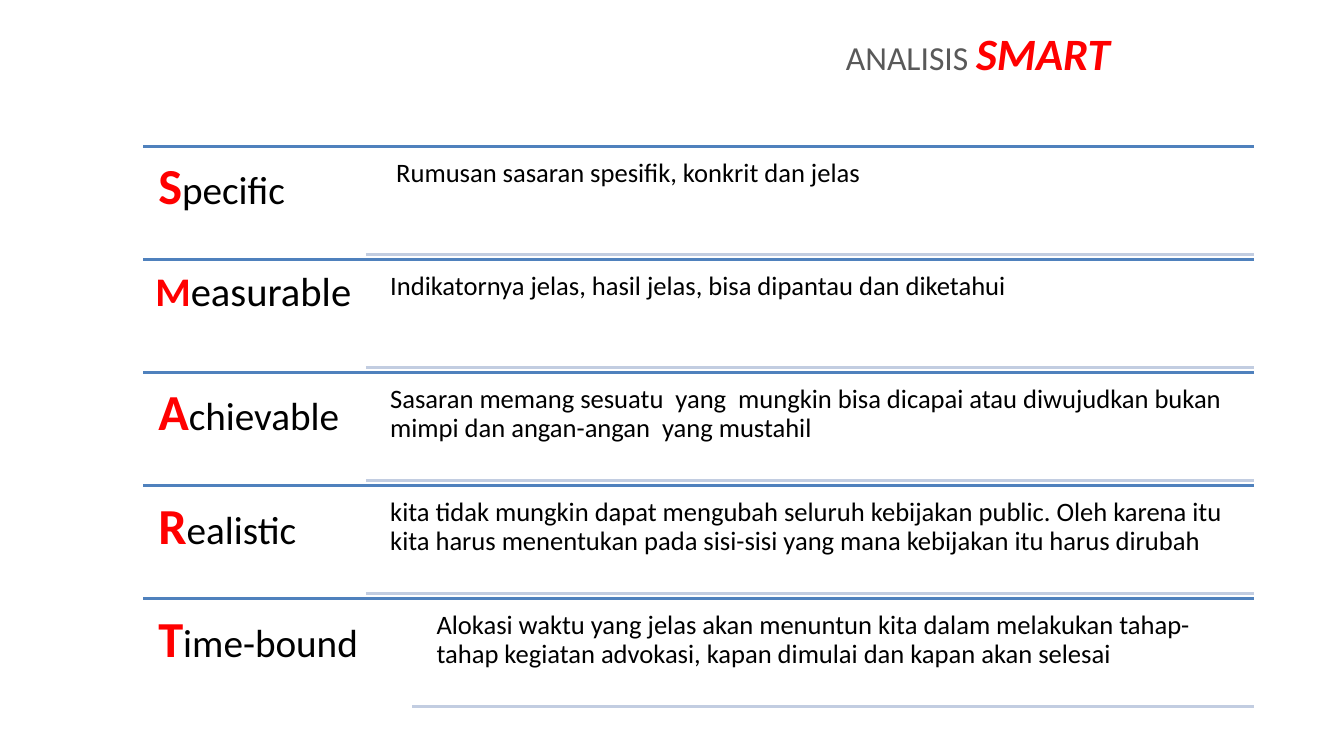
import pptx
import pptx.util
from pptx.dml.color import RGBColor
from pptx.enum.shapes import MSO_CONNECTOR
from pptx.enum.text import MSO_ANCHOR, MSO_AUTO_SIZE, PP_ALIGN
from pptx.oxml.ns import qn
from pptx.util import Inches, Pt
from lxml import etree

# Content: initial, rest of the word, their sizes, label inset, label width, description
TITLE = [("ANALISIS ", 24, "grey", False), ("SMART", 32, "red", True)]
CRITERIA = [
    ("S", "pecific", 36, 28, 0.15, 2.21,
     " Rumusan sasaran spesifik, konkrit dan jelas"),
    ("M", "easurable", 29, 29, 0.12, 2.21,
     "Indikatornya jelas, hasil jelas, bisa dipantau dan diketahui"),
    ("A", "chievable", 36, 28, 0.15, 2.21,
     "Sasaran memang sesuatu  yang  mungkin bisa dicapai atau diwujudkan bukan "
     "mimpi dan angan-angan  yang mustahil"),
    ("R", "ealistic", 36, 28, 0.15, 2.21,
     "kita tidak mungkin dapat mengubah seluruh kebijakan public. Oleh karena itu "
     "kita harus menentukan pada sisi-sisi yang mana kebijakan itu harus dirubah"),
    ("T", "ime-bound", 36, 28, 0.15, 2.67,
     "Alokasi waktu yang jelas akan menuntun kita dalam melakukan tahap-tahap "
     "kegiatan advokasi, kapan dimulai dan kapan akan selesai"),
]
COLORS = {"grey": "595959", "red": "FF0000", "black": "000000",
          "rule": "4F81BD", "underline": "C2CDE1"}
FONT = "Calibri"

# Layout in inches
LEFT, RIGHT, TOP, BOTTOM = 1.42, 12.44, 1.45, 7.06
ROW_HEIGHT = (BOTTOM - TOP) / len(CRITERIA)
GAP = 0.05           # row top to description, and underline to next row
INDENT = 0.16        # label edge to description


def color(name):
    return RGBColor.from_string(COLORS[name])


def add_rule(slide, left, y, color_name):
    rule = slide.shapes.add_connector(
        MSO_CONNECTOR.STRAIGHT, Inches(left), Inches(y), Inches(RIGHT), Inches(y))
    rule.line.color.rgb = color(color_name)
    rule.line.width = Pt(2)
    etree.SubElement(rule._element.spPr, qn("a:effectLst"))


def set_frame(frame, inset_x, inset_y):
    frame.word_wrap = True
    frame.auto_size = MSO_AUTO_SIZE.NONE
    frame.vertical_anchor = MSO_ANCHOR.TOP
    frame.margin_left = frame.margin_right = Inches(inset_x)
    frame.margin_top = frame.margin_bottom = Inches(inset_y)


def add_runs(paragraph, runs):
    paragraph.font.name = FONT
    paragraph.alignment = PP_ALIGN.LEFT
    for text, size, color_name, bold in runs:
        run = paragraph.add_run()
        run.text = text
        run.font.size = Pt(size)
        run.font.bold = bold
        run.font.color.rgb = color(color_name)


def add_text(slide, left, top, width, height, inset, runs):
    box = slide.shapes.add_textbox(
        Inches(left), Inches(top), Inches(width), Inches(height))
    set_frame(box.text_frame, inset, inset)
    paragraph = box.text_frame.paragraphs[0]
    paragraph.line_spacing = 0.9
    add_runs(paragraph, runs)


def add_criterion(slide, top, criterion):
    initial, rest, initial_size, rest_size, inset, label_width, description = criterion
    label_right = LEFT + label_width
    description_left = label_right + INDENT
    description_height = ROW_HEIGHT - 2 * GAP

    add_rule(slide, LEFT, top, "rule")
    add_text(slide, LEFT, top, label_width, ROW_HEIGHT, inset,
             [(initial, initial_size, "red", True), (rest, rest_size, "black", False)])
    add_text(slide, description_left, top + GAP, RIGHT - description_left,
             description_height, 0.08, [(description, 19, "black", False)])
    add_rule(slide, label_right, top + ROW_HEIGHT - GAP, "underline")


def main():
    deck = pptx.Presentation()
    deck.slide_width, deck.slide_height = Inches(13.33), Inches(7.5)
    slide = deck.slides.add_slide(deck.slide_layouts[5])

    # Title
    title = slide.shapes.title
    title.left, title.top = Inches(8.29), Inches(0.21)
    title.width, title.height = Inches(3.41), Inches(0.47)
    set_frame(title.text_frame, 0.1, 0.05)
    heading = title.text_frame.paragraphs[0]
    add_runs(heading, TITLE)
    heading.runs[-1].font.italic = True

    # One row per criterion
    for row, criterion in enumerate(CRITERIA):
        add_criterion(slide, TOP + row * ROW_HEIGHT, criterion)

    deck.save("out.pptx")


if __name__ == "__main__":
    main()
